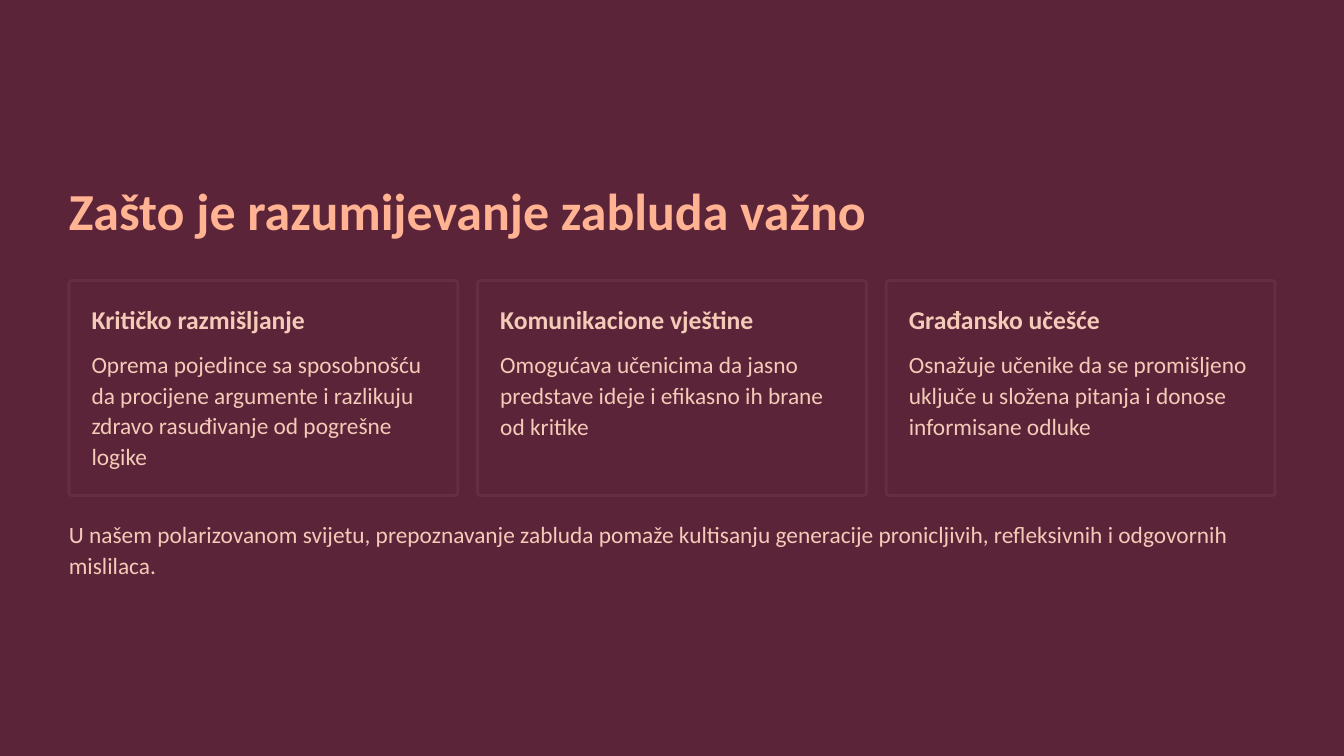
from pptx import Presentation
from pptx.dml.color import RGBColor
from pptx.enum.shapes import MSO_SHAPE
from pptx.enum.text import MSO_ANCHOR, MSO_AUTO_SIZE, PP_ALIGN
from pptx.util import Inches, Pt

ROUNDED = MSO_SHAPE.ROUNDED_RECTANGLE
TOP = MSO_ANCHOR.TOP
NO_AUTOFIT = MSO_AUTO_SIZE.NONE
LEFT_ALIGNED = PP_ALIGN.LEFT

PLUM = RGBColor(0x5C, 0x24, 0x38)
BORDER = RGBColor(0x66, 0x2E, 0x42)
PEACH = RGBColor(0xFF, 0xB3, 0x93)
CREAM = RGBColor(0xF4, 0xCA, 0xB8)

MARGIN = 0.82
CONTENT_WIDTH = 14.36
CARD_TOP = 3.34
CARD_WIDTH = 4.63
CARD_HEIGHT = 2.56
CARD_PADDING = 0.27

CARDS = [
    ("Kritičko razmišljanje", 3.12,
     "Oprema pojedince sa sposobnošću da procijene argumente i razlikuju zdravo rasuđivanje od pogrešne logike", 1.5),
    ("Komunikacione vještine", 3.34,
     "Omogućava učenicima da jasno predstave ideje i efikasno ih brane od kritike", 1.12),
    ("Građansko učešće", 3.12,
     "Osnažuje učenike da se promišljeno uključe u složena pitanja i donose informisane odluke", 1.12),
]


def write_text(shape, text, size, line_spacing, color, bold=False):
    frame = shape.text_frame
    frame.margin_left = frame.margin_right = 0
    frame.margin_top = frame.margin_bottom = 0
    frame.word_wrap = True
    frame.auto_size = NO_AUTOFIT
    frame.vertical_anchor = TOP
    paragraph = frame.paragraphs[0]
    paragraph.alignment = LEFT_ALIGNED
    paragraph.line_spacing = Pt(line_spacing)
    paragraph.space_before = Pt(0)
    run = paragraph.add_run()
    run.text = text
    run.font.name = "Calibri"
    run.font.size = Pt(size)
    run.font.bold = bold
    run.font.color.rgb = color


def add_text(left, top, width, height, *style):
    box = slide.shapes.add_textbox(Inches(left), Inches(top), Inches(width), Inches(height))
    write_text(box, *style)


presentation = Presentation()
presentation.slide_width = Inches(16)
presentation.slide_height = Inches(9)
slide = presentation.slides.add_slide(presentation.slide_layouts[5])
slide.background.fill.solid()
slide.background.fill.fore_color.rgb = PLUM

title = slide.shapes.title
title.left, title.top = Inches(MARGIN), Inches(2.09)
title.width, title.height = Inches(11.27), Inches(0.78)
write_text(title, "Zašto je razumijevanje zabluda važno", 44.5, 56, PEACH, True)

card_gap = (CONTENT_WIDTH - len(CARDS) * CARD_WIDTH) / (len(CARDS) - 1)
for index, (heading, heading_width, body, body_height) in enumerate(CARDS):
    left = MARGIN + index * (CARD_WIDTH + card_gap)
    card = slide.shapes.add_shape(
        ROUNDED, Inches(left), Inches(CARD_TOP), Inches(CARD_WIDTH), Inches(CARD_HEIGHT))
    card.adjustments[0] = 0.014
    card.shadow.inherit = False
    card.fill.solid()
    card.fill.fore_color.rgb = PLUM
    card.line.color.rgb = BORDER
    card.line.width = Pt(2.4)
    text_left = left + CARD_PADDING
    add_text(text_left, 3.6, heading_width, 0.39, heading, 22, 28, CREAM, True)
    add_text(text_left, 4.13, 4.1, body_height, body, 20, 26.5, CREAM)

add_text(
    MARGIN, 6.16, CONTENT_WIDTH, 0.75,
    "U našem polarizovanom svijetu, prepoznavanje zabluda pomaže kultisanju generacije "
    "pronicljivih, refleksivnih i odgovornih mislilaca.",
    20, 26.5, CREAM)

presentation.save("out.pptx")
